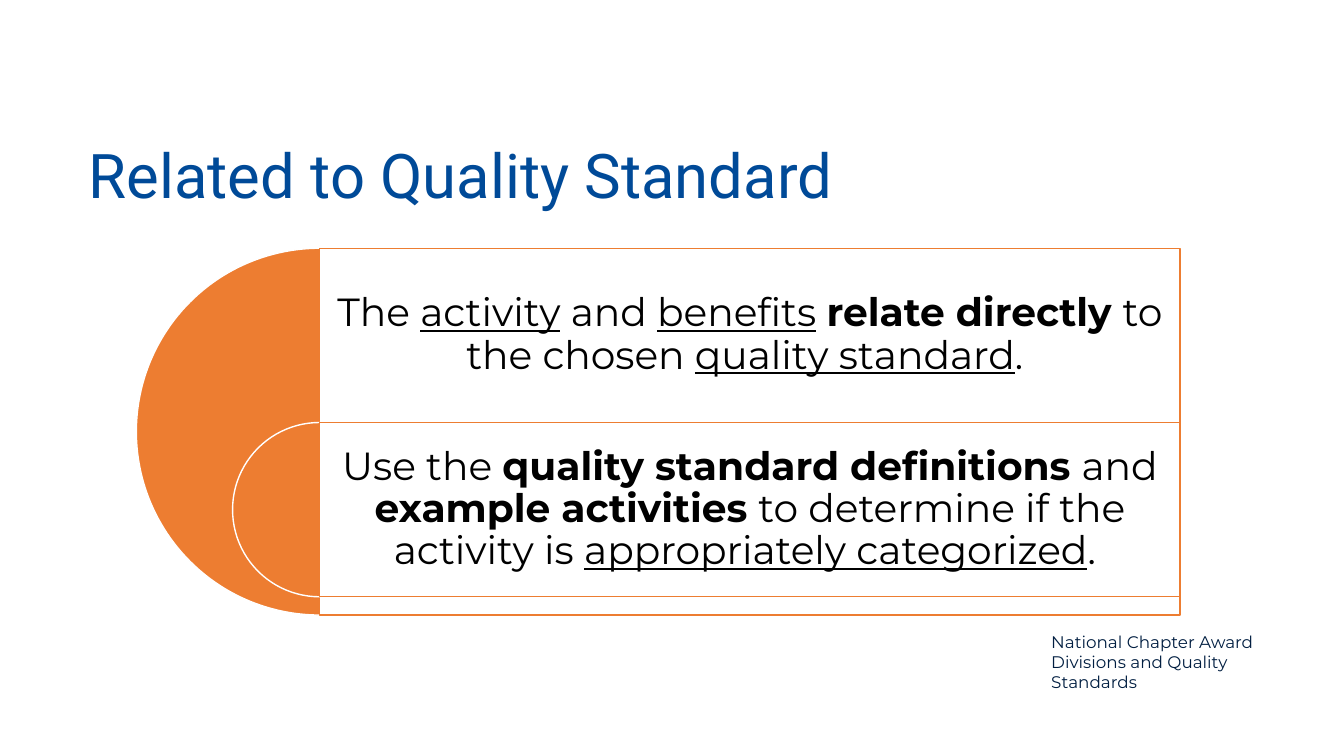
"""Build the quality standard slide: nested half circles beside two statements."""
import pptx
import pptx.util
import pptx.dml.color
import pptx.enum.shapes
import pptx.enum.text
import pptx.oxml

Pt = pptx.util.Pt
RGBColor = pptx.dml.color.RGBColor
SHAPE = pptx.enum.shapes.MSO_SHAPE
ALIGN = pptx.enum.text.PP_ALIGN
ANCHOR = pptx.enum.text.MSO_ANCHOR

BLUE = RGBColor(0x00, 0x4A, 0x98)
NAVY = RGBColor(0x01, 0x1E, 0x41)
ORANGE = RGBColor(0xED, 0x7D, 0x31)
WHITE = RGBColor(0xFF, 0xFF, 0xFF)
BLACK = RGBColor(0x00, 0x00, 0x00)

TITLE = "Related to Quality Standard"
NOTE = "National Chapter Award Divisions and Quality Standards"
POINTS = [
    [("The ", ""), ("activity", "u"), (" and ", ""), ("benefits", "u"),
     (" ", ""), ("relate directly ", "b"), ("to the chosen ", ""),
     ("quality standard", "u"), (". ", "")],
    [("Use the ", ""), ("quality standard definitions ", "b"), ("and ", ""),
     ("example activities ", "b"), ("to determine if the activity is ", ""),
     ("appropriately categorized", "u"), (". ", "")],
]

AXIS, TOP, WIDTH = 228.4, 177.3, 614.6
OUTER, ROW = 262, 124.5


def add_text(slide, box, runs, size, face, color, anchor=ANCHOR.TOP):
    """Place one paragraph of styled runs and return its frame."""
    frame = slide.shapes.add_textbox(*map(Pt, box)).text_frame
    frame.word_wrap = True
    frame.vertical_anchor = anchor
    para = frame.paragraphs[0]
    for words, style in runs:
        run = para.add_run()
        run.text = words
        if style == "b":
            run.font.bold = True
        elif style == "u":
            run.font.underline = True
    para.font.size = Pt(size)
    para.font.name = face
    para.font.color.rgb = color
    return frame


def add_form(slide, kind, box, fill, line):
    """Draw a filled and outlined shape."""
    form = slide.shapes.add_shape(kind, *map(Pt, box))
    form.shadow.inherit = False
    form.fill.solid()
    form.fill.fore_color.rgb = fill
    form.line.color.rgb = line
    form.line.width = Pt(1)
    return form


def add_row(slide, top, size, runs):
    """Draw a half circle, its panel and its statement."""
    pie = add_form(slide, SHAPE.PIE, (AXIS - size / 2, top, size, size),
                   ORANGE, WHITE)
    pie.adjustments[0] = 54
    pie.adjustments[1] = 162
    panel = add_form(slide, SHAPE.RECTANGLE, (AXIS, top, WIDTH, size),
                     WHITE, ORANGE)
    tint = panel.fill._xPr.find(".//" + pptx.oxml.ns.qn("a:srgbClr"))
    alpha = tint.makeelement(pptx.oxml.ns.qn("a:alpha"), {"val": "90000"})
    tint.append(alpha)
    frame = add_text(slide, (AXIS, top, WIDTH, ROW), runs, 28, "Montserrat",
                     BLACK, ANCHOR.MIDDLE)
    frame.margin_left = frame.margin_right = Pt(8.4)
    frame.margin_top = frame.margin_bottom = Pt(8.4)
    frame.paragraphs[0].alignment = ALIGN.CENTER
    frame.paragraphs[0].line_spacing = 0.9


def main():
    """Assemble and save the slide."""
    deck = pptx.Presentation()
    deck.slide_width, deck.slide_height = Pt(960), Pt(540)
    slide = deck.slides.add_slide(deck.slide_layouts[6])
    title = add_text(slide, (56.4, 96.4, 828, 62.6), [(TITLE, "")], 44,
                     "Roboto", BLUE, ANCHOR.MIDDLE)
    title.paragraphs[0].line_spacing = 0.9
    for i, runs in enumerate(POINTS):
        add_row(slide, TOP + i * ROW, (OUTER, ROW)[i], runs)
    add_text(slide, (743.8, 447.8, 173.5, 51), [(NOTE, "")], 12,
             "Montserrat", NAVY)
    deck.save("out.pptx")


if __name__ == "__main__":
    main()
